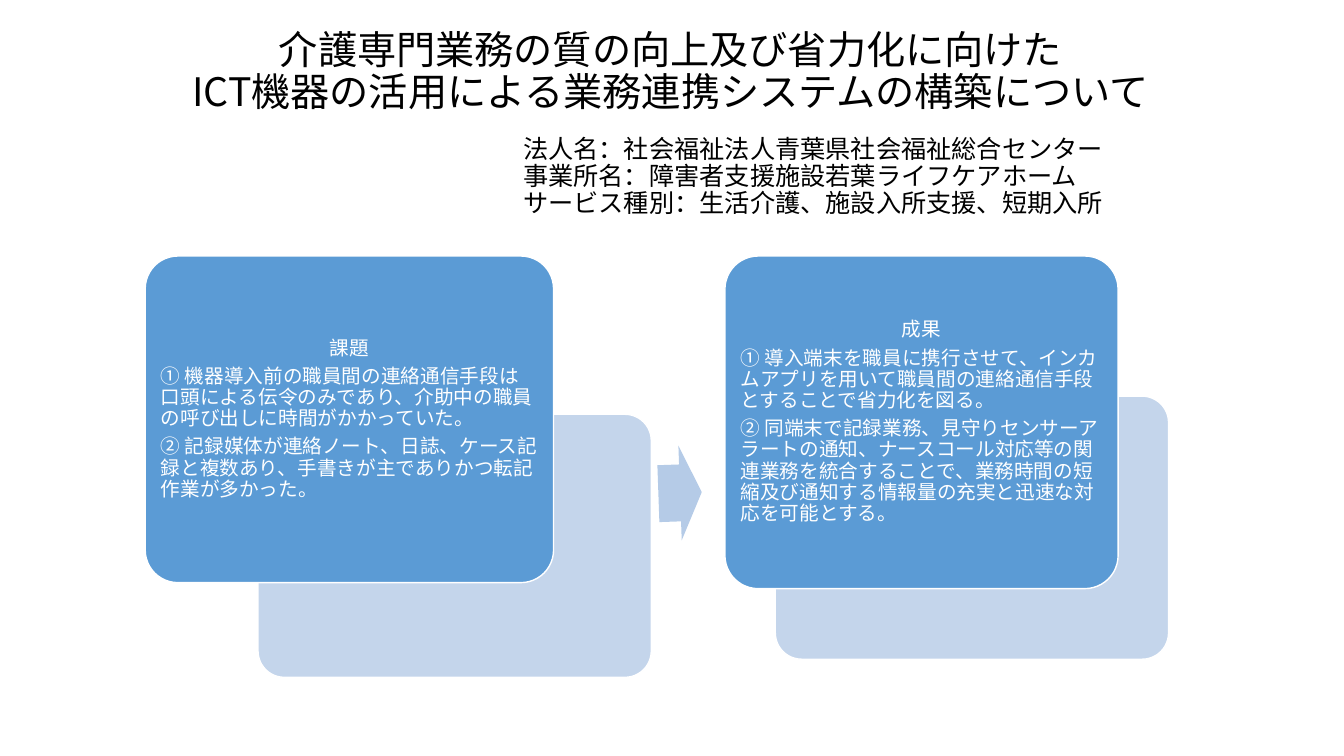
"""Builds the slide on ICT devices for care work: its issues and results."""
from dataclasses import dataclass

from lxml import etree
from pptx import Presentation
from pptx.dml.color import RGBColor
from pptx.enum.shapes import MSO_SHAPE
from pptx.enum.text import MSO_ANCHOR, PP_ALIGN
from pptx.oxml.ns import qn
from pptx.util import Inches, Pt

ROUNDED = MSO_SHAPE.ROUNDED_RECTANGLE
ARROW = MSO_SHAPE.RIGHT_ARROW
MIDDLE = MSO_ANCHOR.MIDDLE
LEFT, CENTER = PP_ALIGN.LEFT, PP_ALIGN.CENTER


@dataclass(frozen=True)
class Theme:
    """Colours, type sizes and font of the slide."""
    font: str = "Noto Sans CJK JP"
    ink: str = "000000"
    white: str = "FFFFFF"
    card: str = "5B9BD5"
    backing: str = "C4D5EB"
    arrow: str = "B5CBE7"
    title: int = 28
    details: int = 18
    body: int = 14


THEME = Theme()

TITLE = "介護専門業務の質の向上及び省力化に向けた\vICT機器の活用による業務連携システムの構築について"
DETAILS = [
    "法人名：社会福祉法人青葉県社会福祉総合センター",
    "事業所名：障害者支援施設若葉ライフケアホーム",
    "サービス種別：生活介護、施設入所支援、短期入所",
]
PANELS = [
    {
        "card": (1.44, 2.54, 4.05, 3.24),
        "backing": (2.56, 4.11, 3.9, 2.61),
        "heading": "課題",
        "points": [
            "① 機器導入前の職員間の連絡通信手段は口頭による伝令のみであり、介助中の職員の呼び出しに時間がかかっていた。",
            "② 記録媒体が連絡ノート、日誌、ケース記録と複数あり、手書きが主でありかつ転記作業が多かった。",
        ],
    },
    {
        "card": (7.19, 2.54, 3.9, 3.3),
        "backing": (7.69, 3.93, 3.9, 2.61),
        "heading": "成果",
        "points": [
            "① 導入端末を職員に携行させて、インカムアプリを用いて職員間の連絡通信手段とすることで省力化を図る。",
            "② 同端末で記録業務、見守りセンサーアラートの通知、ナースコール対応等の関連業務を統合することで、"
            "業務時間の短縮及び通知する情報量の充実と迅速な対応を可能とする。",
        ],
    },
]


def apply_format(target, values):
    """Set each attribute named in values on the target."""
    for name, value in values.items():
        setattr(target, name, value)


def write_paragraph(para, text, size, color, **layout):
    """Fill one paragraph and style its runs for Latin and Japanese text."""
    para.text = text
    apply_format(para, {"line_spacing": 0.9, **layout})
    for span in para.runs:
        apply_format(span.font, {"size": Pt(size), "name": THEME.font})
        span.font.color.rgb = RGBColor.from_string(color)
        properties = span.font._element
        etree.SubElement(properties, qn("a:ea"), typeface=THEME.font)


def next_paragraph(frame, index):
    """Return the first paragraph of the frame, or a new one after it."""
    return frame.paragraphs[0] if index == 0 else frame.add_paragraph()


def add_text(page, place, lines, size, align):
    """Add a text box with one paragraph for each line."""
    frame = page.shapes.add_textbox(*map(Inches, place)).text_frame
    apply_format(frame, {"word_wrap": True, "vertical_anchor": MIDDLE})
    for index, line in enumerate(lines):
        write_paragraph(next_paragraph(frame, index), line, size, THEME.ink, alignment=align)


def add_block(page, kind, place, fill, adjustments, outlined=True):
    """Add a filled preset shape, with a thin white outline if asked."""
    block = page.shapes.add_shape(kind, *map(Inches, place))
    block.shadow.inherit = False
    block.fill.solid()
    block.fill.fore_color.rgb = RGBColor.from_string(fill)
    for index, value in enumerate(adjustments):
        block.adjustments[index] = value
    if outlined:
        block.line.color.rgb = RGBColor.from_string(THEME.white)
        block.line.width = Pt(1)
    else:
        block.line.fill.background()
    return block


def add_panel(page, panel):
    """Add a pale backing with a card holding a heading and points."""
    add_block(page, ROUNDED, panel["backing"], THEME.backing, [0.1])
    card = add_block(page, ROUNDED, panel["card"], THEME.card, [0.1])
    frame = card.text_frame
    apply_format(frame, {"word_wrap": True, "vertical_anchor": MIDDLE})
    sides = ("left", "top", "right", "bottom")
    apply_format(frame, {f"margin_{side}": Inches(0.06) for side in sides})
    for index, line in enumerate([panel["heading"], *panel["points"]]):
        write_paragraph(next_paragraph(frame, index), line, THEME.body, THEME.white,
                        alignment=LEFT if index else CENTER, space_after=Pt(5))


def main():
    """Build the deck and save it."""
    deck = Presentation()
    apply_format(deck, {"slide_width": Inches(13.33), "slide_height": Inches(7.5)})
    page = deck.slides.add_slide(deck.slide_layouts[6])
    add_text(page, (0.9, 0.23, 11.5, 0.99), [TITLE], THEME.title, CENTER)
    add_text(page, (5.09, 1.22, 6.21, 1.08), DETAILS, THEME.details, LEFT)
    for panel in PANELS:
        add_panel(page, panel)
    arrow = add_block(page, ARROW, (6.53, 4.42, 0.43, 0.94), THEME.arrow, [0.6, 0.5], outlined=False)
    arrow.rotation = 358
    deck.save("out.pptx")


if __name__ == "__main__":
    main()
